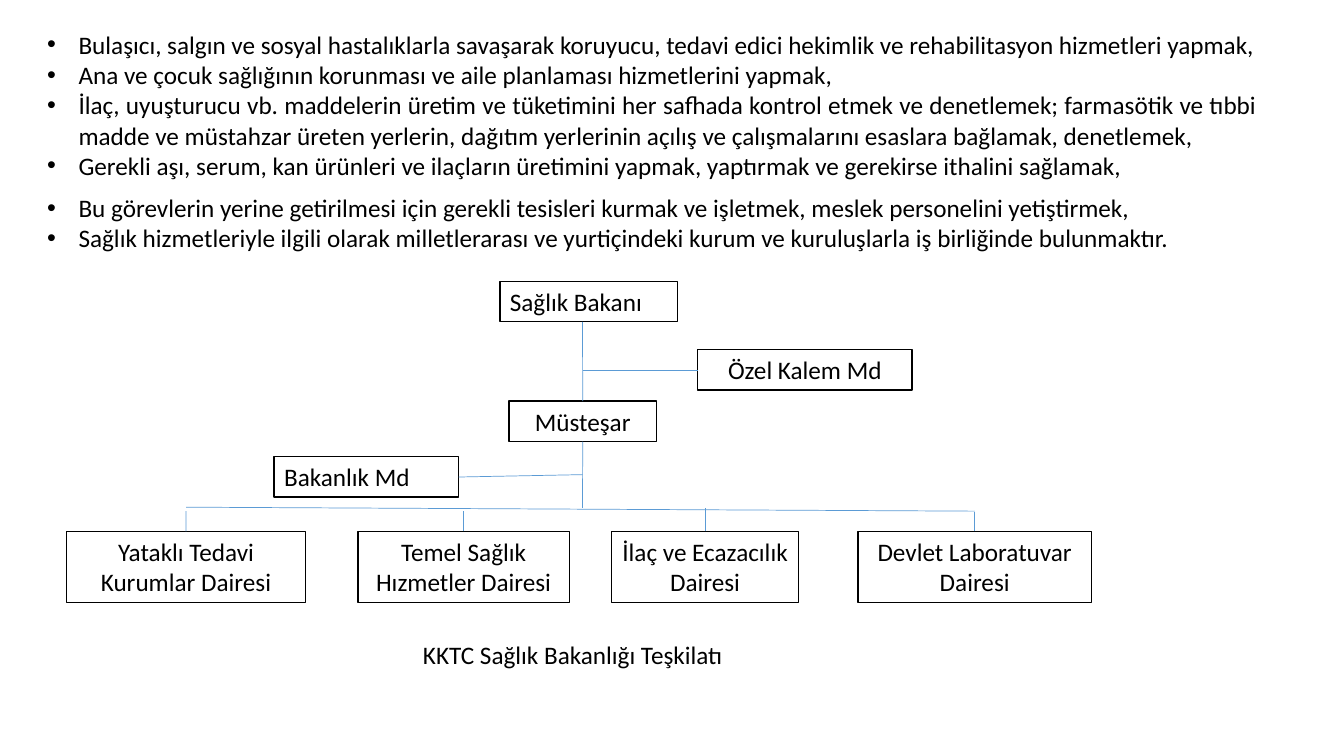
from dataclasses import dataclass

from lxml.etree import SubElement
from pptx import Presentation
from pptx.dml.color import RGBColor
from pptx.enum.shapes import MSO_CONNECTOR, MSO_SHAPE
from pptx.enum.text import MSO_ANCHOR, MSO_AUTO_SIZE, PP_ALIGN
from pptx.oxml.ns import qn
from pptx.util import Cm, Pt

# Content: (left, top, width, height) in cm, then the lines
DUTIES = [
    ((0.94, 0.61, 30.99, 4.11), [
        "Bulaşıcı, salgın ve sosyal hastalıklarla savaşarak koruyucu, tedavi edici hekimlik ve rehabilitasyon hizmetleri yapmak,",
        "Ana ve çocuk sağlığının korunması ve aile planlaması hizmetlerini yapmak,",
        "İlaç, uyuşturucu vb. maddelerin üretim ve tüketimini her safhada kontrol etmek ve denetlemek; farmasötik ve tıbbi madde ve müstahzar üreten yerlerin, dağıtım yerlerinin açılış ve çalışmalarını esaslara bağlamak, denetlemek,",
        "Gerekli aşı, serum, kan ürünleri ve ilaçların üretimini yapmak, yaptırmak ve gerekirse ithalini sağlamak,",
    ]),
    ((0.94, 4.72, 30.58, 1.8), [
        "Bu görevlerin yerine getirilmesi için gerekli tesisleri kurmak ve işletmek, meslek personelini yetiştirmek,",
        "Sağlık hizmetleriyle ilgili olarak milletlerarası ve yurtiçindeki kurum ve kuruluşlarla iş birliğinde bulunmaktır.",
    ]),
]
# Offices: name, left, top, width, alignment
OFFICES = [
    ("Sağlık Bakanı", 12.6, 7.09, 4.47, PP_ALIGN.LEFT),
    ("Özel Kalem Md", 17.58, 8.81, 5.41, PP_ALIGN.CENTER),
    ("Müsteşar", 12.83, 10.11, 3.71, PP_ALIGN.CENTER),
    ("Bakanlık Md", 6.91, 11.51, 4.65, PP_ALIGN.LEFT),
]
# Departments: name, left, width, top of the branch above
DEPARTMENTS = [
    ("Yataklı Tedavi Kurumlar Dairesi", 1.68, 6.02, 12.88),
    ("Temel Sağlık Hızmetler Dairesi", 9.02, 5.33, 12.88),
    ("İlaç ve Ecazacılık Dairesi", 15.41, 4.72, 12.8),
    ("Devlet Laboratuvar Dairesi", 21.62, 5.89, 12.9),
]
CAPTION = ("KKTC Sağlık Bakanlığı Teşkilatı", (10.41, 15.98, 8.84, 1.02))

OFFICE_HEIGHT = 1.02
DEPARTMENT_TOP, DEPARTMENT_HEIGHT = 13.39, 1.8
SPINE_X = 14.68
BUS_LEFT_Y, BUS_MIDDLE_Y, BUS_RIGHT_Y = 12.78, 12.8, 12.88
TOP, LEFT, BOTTOM, RIGHT = range(4)


@dataclass(frozen=True)
class Theme:
    font: str = "Calibri"
    size: Pt = Pt(18)
    ink: RGBColor = RGBColor(0, 0, 0)
    link: RGBColor = RGBColor(0x5B, 0x9B, 0xD5)
    border: Pt = Pt(1)
    link_width: Pt = Pt(0.5)
    indent: Cm = Cm(0.79)


theme = Theme()
deck = Presentation()
deck.slide_width, deck.slide_height = Cm(33.87), Cm(19.05)
slide = deck.slides.add_slide(deck.slide_layouts[6])


def write(holder, lines, alignment, bulleted=False):
    frame = holder.text_frame
    frame.word_wrap = True
    frame.auto_size = MSO_AUTO_SIZE.SHAPE_TO_FIT_TEXT
    frame.vertical_anchor = MSO_ANCHOR.TOP
    frame.text = "\n".join(lines)
    for paragraph in frame.paragraphs:
        paragraph.alignment = alignment
        paragraph.font.name = theme.font
        paragraph.font.size = theme.size
        paragraph.font.color.rgb = theme.ink
        if bulleted:
            properties = paragraph._p.get_or_add_pPr()
            properties.set("marL", str(theme.indent))
            properties.set("indent", str(-theme.indent))
            bullet_font = properties.makeelement(qn("a:buFont"), {"typeface": "Arial"})
            bullet = properties.makeelement(qn("a:buChar"), {"char": "•"})
            properties.find(qn("a:defRPr")).addprevious(bullet_font)
            bullet_font.addnext(bullet)


def add_text(place, lines, alignment, bulleted=False):
    write(slide.shapes.add_textbox(*map(Cm, place)), lines, alignment, bulleted)


def add_unit(name, left, top, width, height, alignment=PP_ALIGN.CENTER):
    unit = slide.shapes.add_shape(
        MSO_SHAPE.RECTANGLE, Cm(left), Cm(top), Cm(width), Cm(height))
    unit.shadow.inherit = False
    unit.fill.background()
    unit.line.color.rgb = theme.ink
    unit.line.width = theme.border
    write(unit, [name], alignment)
    return unit


def add_link(start, end, unit=None, side=None):
    link = slide.shapes.add_connector(
        MSO_CONNECTOR.STRAIGHT, *map(Cm, (*start, *end)))
    link.line.color.rgb = theme.link
    link.line.width = theme.link_width
    SubElement(link._element.spPr, qn("a:effectLst"))
    if unit is not None:
        link.begin_connect(unit, side)


# Duties
for place, lines in DUTIES:
    add_text(place, lines, PP_ALIGN.JUSTIFY, bulleted=True)

# Offices
minister, private_office, undersecretary, ministry_manager = [
    add_unit(name, left, top, width, OFFICE_HEIGHT, alignment)
    for name, left, top, width, alignment in OFFICES
]

# Spine and side links, each starting at its office
spine = SPINE_X, 10.11
add_link(spine, (SPINE_X, 8.11), undersecretary, TOP)
add_link(spine, (SPINE_X, BUS_MIDDLE_Y), undersecretary, BOTTOM)
add_link((17.58, 9.32), (SPINE_X, 9.32), private_office, LEFT)
add_link((11.56, 12.02), (SPINE_X, 11.96), ministry_manager, RIGHT)

# Departments, their branches and the bus over them
centres = []
for name, left, width, branch_top in DEPARTMENTS:
    department = add_unit(name, left, DEPARTMENT_TOP, width, DEPARTMENT_HEIGHT)
    centre = left + width / 2
    centres.append(centre)
    add_link((centre, DEPARTMENT_TOP), (centre, branch_top), department, TOP)
add_link((centres[0], BUS_LEFT_Y), (centres[-1], BUS_RIGHT_Y))

# Caption
caption, caption_place = CAPTION
add_text(caption_place, [caption], PP_ALIGN.LEFT)

deck.save("out.pptx")
